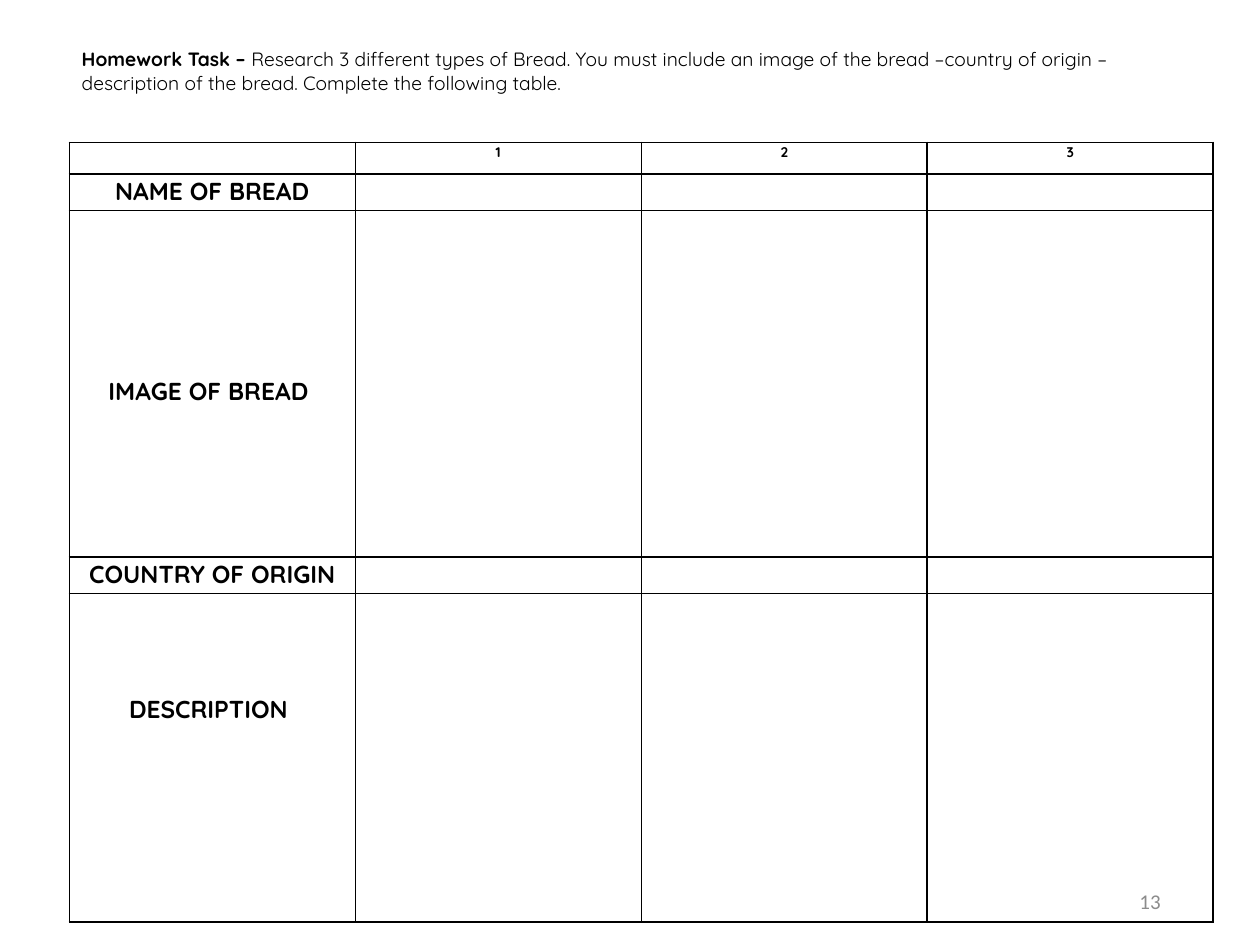
import pptx
import pptx.util
import pptx.dml.color
import pptx.enum.text
from lxml import etree

IN, PT = pptx.util.Inches, pptx.util.Pt
ALIGN = pptx.enum.text.PP_ALIGN
ANCHOR = pptx.enum.text.MSO_ANCHOR

TASK = [
    ("Homework Task – ", True),
    ("Research 3 different types of Bread. You must include an image of the "
     "bread –country of origin – description of the bread. "
     "Complete the following table.", False),
]
HEADS = ["", "1", "2", "3"]
# label, row height, space above the label, extra space to its right
ROWS = [
    ("NAME OF BREAD", 0.29, 0, 0),
    ("IMAGE OF BREAD", 2.75, 1.3, 0.06),
    ("COUNTRY OF ORIGIN", 0.29, 0, 0),
    ("DESCRIPTION", 2.61, 0.78, 0.06),
]
PAGE = "13"
LEFT, TOP, WIDE = 0.55, 1.13, 9.08
HEAD, PAD, LINE = 0.25, 0.06, 1.07
INK, GREY = "000000", "8C8C8C"


def color(code):
    return pptx.dml.color.RGBColor.from_string(code)


def style(obj, form):
    for key, value in form.items():
        setattr(obj, key, value)


def write(para, text, size, bold=False, face="Quicksand", ink=INK):
    run = para.add_run()
    run.text = text
    style(run.font, {"size": PT(size), "bold": bold, "name": face})
    run.font.color.rgb = color(ink)


def textbox(slide, *box):
    frame = slide.shapes.add_textbox(*map(IN, box)).text_frame
    frame.word_wrap = True
    return frame


def border(cell):
    props = cell._tc.get_or_add_tcPr()
    for at, side in enumerate(("lnL", "lnR", "lnT", "lnB")):
        line = etree.Element(pptx.oxml.ns.qn("a:" + side), w=str(PT(1)))
        fill = etree.SubElement(line, pptx.oxml.ns.qn("a:solidFill"))
        etree.SubElement(fill, pptx.oxml.ns.qn("a:srgbClr"), val=INK)
        props.insert(at, line)


def fill(cell, text, size, above=0, right=0):
    style(cell, {"margin_left": IN(PAD), "margin_right": IN(PAD + right),
                 "margin_top": IN(above), "margin_bottom": 0,
                 "vertical_anchor": ANCHOR.TOP})
    cell.fill.background()
    border(cell)
    para = cell.text_frame.paragraphs[0]
    style(para, {"alignment": ALIGN.CENTER, "line_spacing": LINE})
    if text:
        write(para, text, size, True)
    else:
        # keeps an empty cell from stretching its row
        para._p.get_or_add_endParaRPr().set("sz", str(size * 100))


def main():
    deck = pptx.Presentation()
    style(deck, {"slide_width": IN(10), "slide_height": IN(7.5)})
    slide = deck.slides.add_slide(deck.slide_layouts[6])

    page = textbox(slide, 7.06, 6.95, 2.25, 0.4)
    page.vertical_anchor = ANCHOR.MIDDLE
    page.paragraphs[0].alignment = ALIGN.RIGHT
    write(page.paragraphs[0], PAGE, 12, face="Calibri", ink=GREY)

    para = textbox(slide, LEFT, 0.31, 8.99, 0.5).paragraphs[0]
    style(para, {"line_spacing": LINE, "space_after": PT(8)})
    for text, bold in TASK:
        write(para, text, 11, bold)

    tall = [HEAD] + [row[1] for row in ROWS]
    table = slide.shapes.add_table(
        len(tall), len(HEADS), IN(LEFT), IN(TOP), IN(WIDE), IN(sum(tall))).table
    style(table, {"first_row": False, "horz_banding": False})
    for col in table.columns:
        col.width = IN(WIDE / len(HEADS))
    for row, high in zip(table.rows, tall):
        row.height = IN(high)

    for c, head in enumerate(HEADS):
        fill(table.cell(0, c), head, 8)
    for r, (label, _, above, right) in enumerate(ROWS, 1):
        fill(table.cell(r, 0), label, 14, above, right)
        for c in range(1, len(HEADS)):
            fill(table.cell(r, c), "", 8)

    deck.save("out.pptx")


if __name__ == "__main__":
    main()
